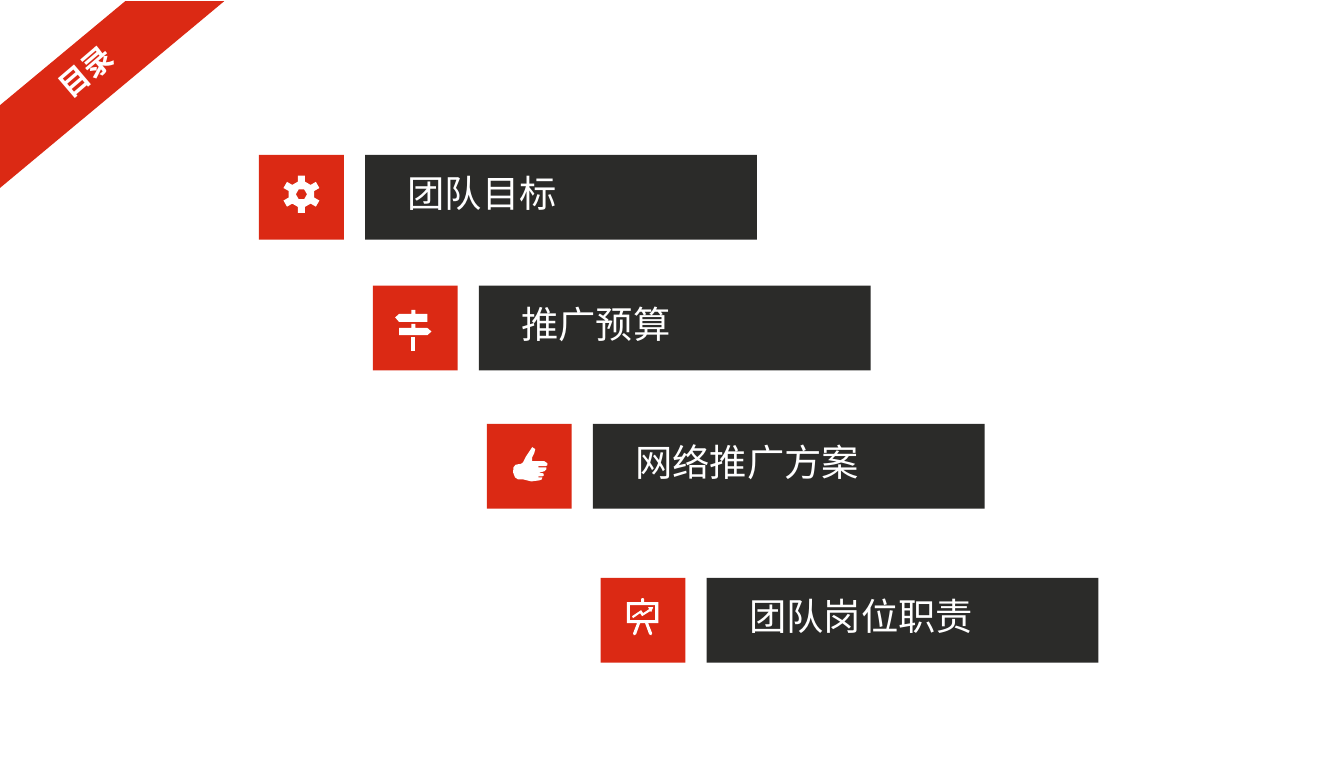
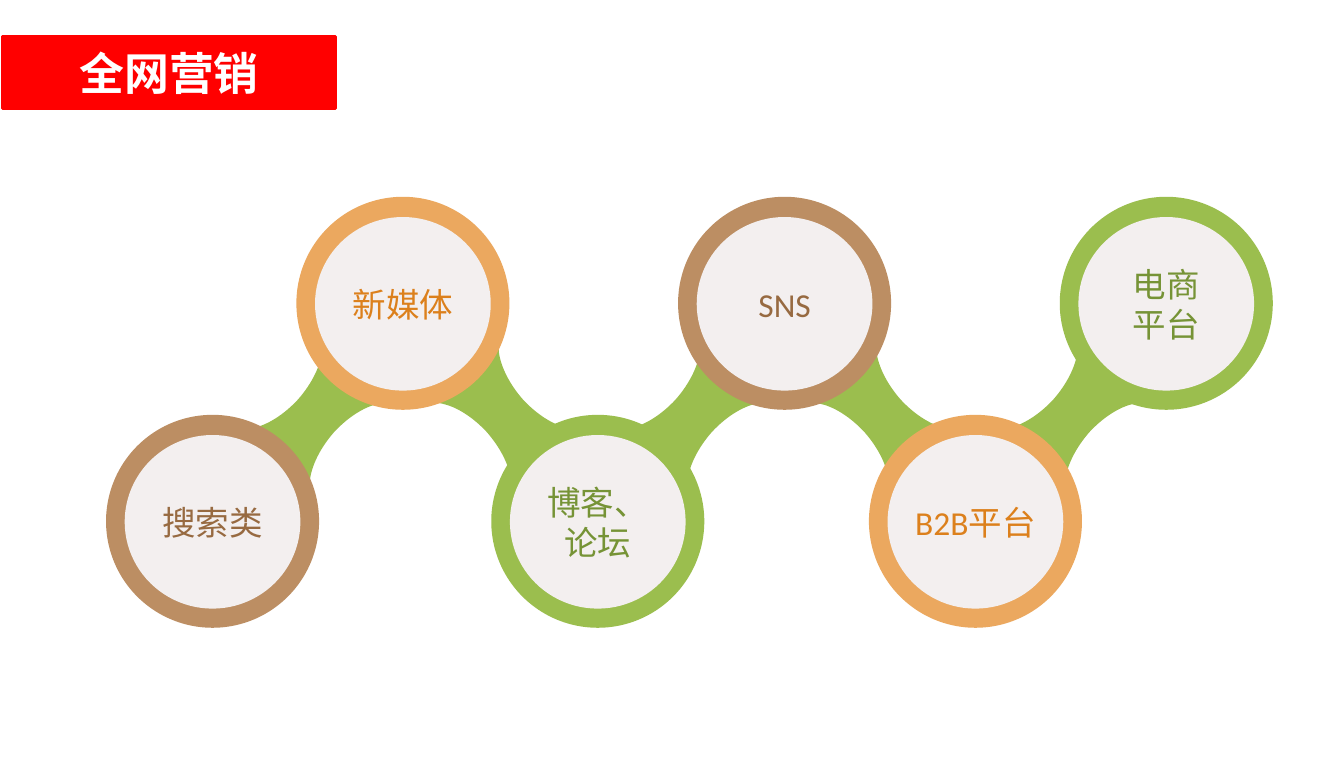
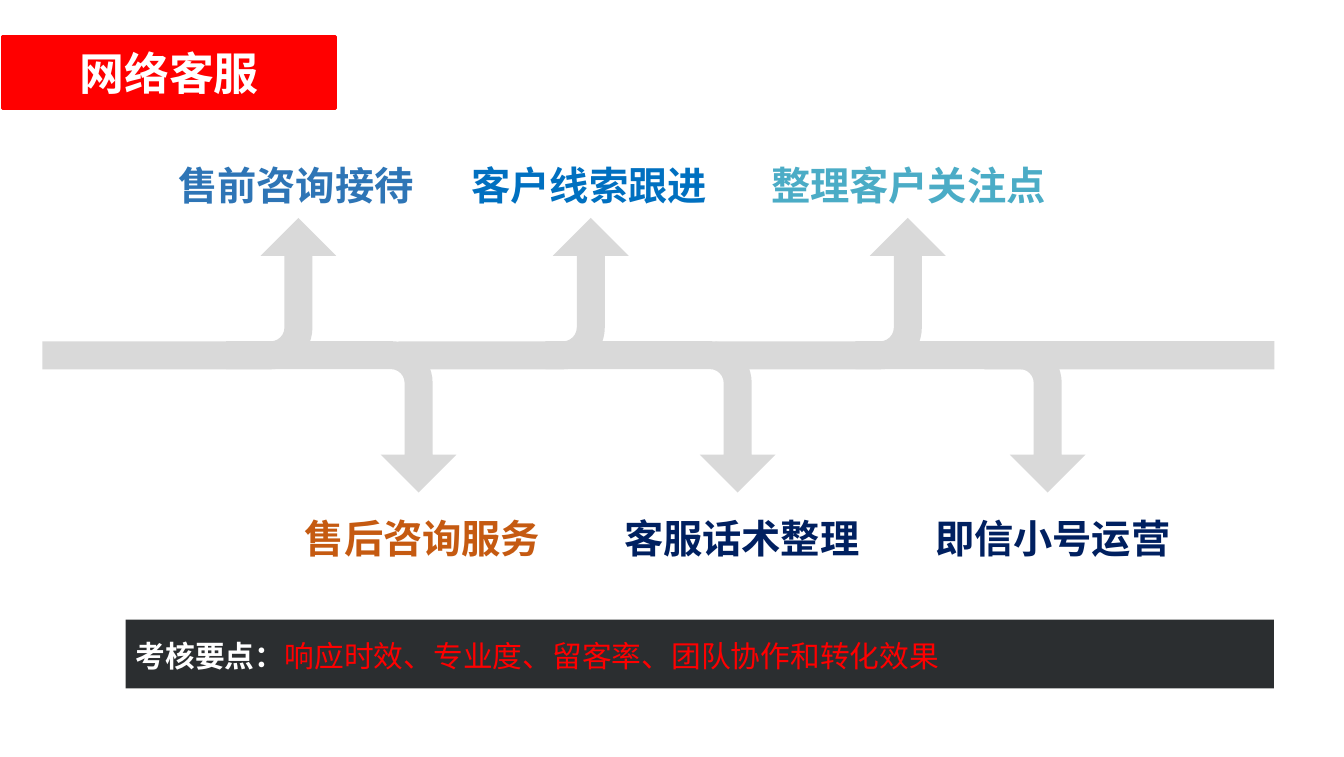
from math import cos, radians, sin

from lxml import etree
from pptx import Presentation
from pptx.dml.color import RGBColor
from pptx.enum.shapes import MSO_SHAPE
from pptx.enum.text import MSO_ANCHOR, MSO_AUTO_SIZE, PP_ALIGN
from pptx.oxml.ns import qn
from pptx.util import Inches, Pt

RECT, OVAL, BENT = MSO_SHAPE.RECTANGLE, MSO_SHAPE.OVAL, MSO_SHAPE.BENT_ARROW
LEFT, CENTER = PP_ALIGN.LEFT, PP_ALIGN.CENTER
TOP, MIDDLE = MSO_ANCHOR.TOP, MSO_ANCHOR.MIDDLE
NO_FIT = MSO_AUTO_SIZE.NONE

COLS, ROWS, CELL = 133.1, 75, 0.1
LATIN, CJK = "Calibri", "Noto Sans CJK SC"
COLORS = {
    "white": "FFFFFF", "ribbon": "DB2914", "bar": "2B2B29", "red": "FF0000",
    "green": "9BBE4E", "green_text": "769336",
    "brown": "BC8E63", "brown_text": "976A41",
    "orange": "EBA85F", "orange_text": "DC801C",
    "disc": "F3EFEF", "flow": "D9D9D9", "note": "2B2E30", "rust": "C55A11",
    "navy": "002060", "steel": "2E75B6", "blue": "0070C0", "teal": "4BACC6",
}


def grid(n):
    return Inches(n * CELL)


def turn(x, y, degrees):
    a = radians(degrees)
    return x * cos(a) - y * sin(a), x * sin(a) + y * cos(a)


class Deck:
    def __init__(self):
        self.prs = Presentation()
        self.prs.slide_width, self.prs.slide_height = grid(COLS), grid(ROWS)
        self.s = None

    def slide(self):
        self.s = self.prs.slides.add_slide(self.prs.slide_layouts[5])

    def place(self, sp, x, y, w, h):
        sp.left, sp.top, sp.width, sp.height = map(grid, (x, y, w, h))

    def paint(self, sp, color):
        sp.shadow.inherit = False
        sp.fill.solid()
        sp.fill.fore_color.rgb = RGBColor.from_string(COLORS[color])
        sp.line.fill.background()
        return sp

    def text(self, sp, paragraphs, size, font=LATIN, align=CENTER, anchor=MIDDLE,
             insets=None, spacing=None):
        tf = sp.text_frame
        tf.word_wrap, tf.auto_size, tf.vertical_anchor = True, NO_FIT, anchor
        if insets:
            tf.margin_left, tf.margin_top, tf.margin_right, tf.margin_bottom = map(grid, insets)
        for i, runs in enumerate(paragraphs):
            p = tf.add_paragraph() if i else tf.paragraphs[0]
            p.alignment = align
            if spacing:
                p.line_spacing = spacing
            for words, color, bold in runs:
                r = p.add_run()
                r.text = words
                r.font.size, r.font.bold, r.font.name = Pt(size), bold, font
                r.font.color.rgb = RGBColor.from_string(COLORS[color])
                etree.SubElement(r._r.get_or_add_rPr(), qn("a:ea")).set("typeface", CJK)

    def shape(self, kind, x, y, w, h, color):
        return self.paint(self.s.shapes.add_shape(kind, *map(grid, (x, y, w, h))), color)

    def outline(self, contours, color, x=0, y=0, rotation=0):
        contours = [[turn(px, py, -rotation) for px, py in c] for c in contours]
        contours = [[(grid(x + px), grid(y + py)) for px, py in c] for c in contours]
        fb = self.s.shapes.build_freeform(*contours[0][0])
        for i, points in enumerate(contours):
            if i:
                fb.move_to(*points[0])
            fb.add_line_segments(points[1:], close=True)
        sp = self.paint(fb.convert_to_shape(), color)
        sp.rotation = rotation % 360
        return sp

    def bend(self, sp, starts):
        lines = list(sp.element.iter(qn("a:lnTo")))
        for start in starts:
            first, *rest = lines[start:start + 3]
            first.tag = qn("a:cubicBezTo")
            for line in rest:
                first.append(line[0])
                line.getparent().remove(line)

    def ribbon_title(self, words):
        cx, cy = 9.05, 6.95
        corners = [(12.4, 0.1), (22.2, 0.1), (0, 18.6), (0, 10.4)]
        ribbon = self.outline([[(x - cx, y - cy) for x, y in corners]], "ribbon",
                              cx, cy, 320.1)
        sp = self.s.shapes.title
        ribbon.element.addnext(sp.element)
        self.place(sp, 4.4, 4.45, 8.9, 4.6)
        sp.rotation = 319.5
        self.text(sp, [[(words, "white", True)]], 21.3, CJK, LEFT, TOP)

    def band_title(self, words):
        sp = self.s.shapes.title
        self.place(sp, 0.25, 3.65, 33, 7.1)
        self.paint(sp, "red")
        sp.line.color.rgb = RGBColor.from_string(COLORS["red"])
        sp.line.width = Pt(2)
        self.text(sp, [[(words, "white", True)]], 32)

    def agenda_row(self, x, y, words, icon):
        self.shape(RECT, x, y, 8.4, 8.4, "ribbon")
        bar = self.shape(RECT, x + 10.5, y, 38.8, 8.4, "bar")
        self.text(bar, [[(words, "white", False)]], 26.6, CJK, LEFT, TOP, (4.2, 1.5, 1, 0))
        for contours in icon:
            self.outline(contours, "white", x, y)

    def ring(self, x, y, lines, color):
        self.shape(OVAL, x, y, 21.1, 21.1, color)
        disc = self.shape(OVAL, x + 1.85, y + 2, 17.4, 17.2, "disc")
        self.text(disc, [[(line, color + "_text", False)] for line in lines], 23.9,
                  insets=(0, 0, 0, 0))

    def link(self, cx, cy, side):
        half = [(-6.7, 1.3), (-6.2, 1.2), (-4.8, 0.9), (-3.2, -0.1), (-1.8, -1.6),
                (-0.4, -3.2), (0.4, -4.9), (0.6, -6.3), (0.6, -6.8)]
        points = half + [(-x, -y) for x, y in half]
        sp = self.outline([[(side * x, y) for x, y in points]], "green", cx, cy, -48 * side)
        self.bend(sp, (1, 4, 10, 13))

    def flow_arrow(self, head, length, up):
        center_y = 29.1 if up else 41.3
        sp = self.shape(BENT, head + 3.75 - length / 2 - 7.5, center_y - length / 2,
                        15, length, "flow")
        for i, share in enumerate((0.185, 0.25, 0.25, 0.276)):
            sp.adjustments[i] = share
        sp.rotation = 270 if up else 90
        if up:
            sp.element.spPr.find(qn("a:xfrm")).set("flipV", "1")

    def flow_label(self, cx, y, words, color):
        w = 4.4 * len(words)
        sp = self.s.shapes.add_textbox(*map(grid, (cx - w / 2, y, w, 5.5)))
        self.text(sp, [[(words, color, True)]], 28, spacing=1.2)


def gear():
    tooth = [(-0.35, -1.25), (-0.35, -1.85), (0.35, -1.85), (0.35, -1.25)]
    rim = [turn(x, y, a) for a in range(0, 360, 60) for x, y in tooth]
    hole = [turn(0.55, 0, a) for a in range(0, 360, 60)]
    return [[[(x + 4.2, y + 3.9) for x, y in c] for c in (rim, hole)]]


SIGNPOST = [
    [[(2.2, 3.15), (2.6, 2.8), (3.8, 2.8), (3.8, 2.4), (4.2, 2.4), (4.2, 2.8),
      (5.4, 2.8), (5.4, 3.6), (2.6, 3.6)]],
    [[(2.6, 4.2), (3.8, 4.2), (3.8, 3.8), (4.2, 3.8), (4.2, 4.2), (5.4, 4.2),
      (5.8, 4.55), (5.4, 4.9), (2.6, 4.9)]],
    [[(3.8, 5.1), (4.2, 5.1), (4.2, 6.5), (3.8, 6.5)]],
]
THUMB = [[[
    (4.5, 2.3), (4.8, 2.5), (4.7, 2.9), (4.5, 3.3), (4.5, 3.7), (5.7, 3.7), (6, 3.9),
    (6, 4.1), (5.8, 4.2), (5.1, 4.2), (5.1, 4.3), (5.9, 4.3), (5.9, 4.5), (5.7, 4.7),
    (5.1, 4.85), (5.6, 4.9), (5.65, 5.1), (5.5, 5.2), (5.1, 5.2), (5.1, 5.3),
    (5.5, 5.3), (5.45, 5.5), (5.2, 5.6), (4.4, 5.7), (3.6, 5.5), (3.1, 5.5),
    (2.8, 5.3), (2.6, 4.8), (2.65, 4.3), (2.85, 4.05), (3.4, 3.95), (3.6, 3.8),
    (3.9, 3.2),
]]]
EASEL = [
    [[(5.7, 2.4), (4.3, 2.4), (4.3, 2.1), (4.2, 2), (4.1, 2), (4, 2.1), (4, 2.4),
      (2.6, 2.4), (2.6, 4.5), (3.6, 4.5), (3.2, 5.5), (3.3, 5.7), (3.5, 5.6),
      (3.9, 4.5), (4.4, 4.5), (4.8, 5.6), (5, 5.7), (5.1, 5.5), (4.7, 4.5),
      (5.7, 4.5)],
     [(5.4, 4.2), (2.9, 4.2), (2.9, 2.7), (5.4, 2.7)]],
    [[(3.2, 4), (3.9, 3.5), (4.1, 3.8), (4.9, 3.3), (5, 3.4), (5.2, 2.9), (4.7, 2.9),
      (4.8, 3.1), (4.2, 3.5), (4, 3.2), (3.1, 3.8)]],
]


def agenda(deck):
    deck.slide()
    deck.ribbon_title("目录")
    rows = [(15.35, "团队目标", gear()), (28.3, "推广预算", SIGNPOST),
            (42, "网络推广方案", THUMB), (57.25, "团队岗位职责", EASEL)]
    for i, (y, words, icon) in enumerate(rows):
        deck.agenda_row(25.65 + 11.28 * i, y, words, icon)


def channels(deck):
    deck.slide()
    deck.band_title("全网营销")
    for i in range(5):
        deck.link(31.3 + 18.7 * i, 41.2, -1 if i % 2 else 1)
    rings = [(10.5, ["搜索类"], "brown"), (29.35, ["新媒体"], "orange"),
             (48.65, ["博客、论坛"], "green"), (67.15, ["SNS"], "brown"),
             (86.05, ["B2B平台"], "orange"), (104.95, ["电商", "平台"], "green")]
    for i, (x, lines, color) in enumerate(rings):
        deck.ring(x, 19.5 if i % 2 else 41.1, lines, color)


def service(deck):
    deck.slide()
    deck.band_title("网络客服")
    note = deck.shape(RECT, 12.45, 61.4, 113.7, 6.8, "note")
    deck.text(note, [[("考核要点：", "white", True),
                      ("响应时效、专业度、留客率、团队协作和转化效果", "red", False)]],
              21.2, align=LEFT, insets=(1, 0.8, 1, 0.4))
    steps = [(29.55, 29.1, 29.3, "售前咨询接待", "steel"),
             (41.45, 22.8, 41.85, "售后咨询服务", "rust"),
             (58.5, 22.8, 58.35, "客户线索跟进", "blue"),
             (73.05, 22.8, 73.45, "客服话术整理", "navy"),
             (89.9, 22.8, 89.95, "整理客户关注点", "teal"),
             (103.75, 22.8, 104.25, "即信小号运营", "navy")]
    for i, (head, length, label_x, words, color) in enumerate(steps):
        up = i % 2 == 0
        deck.flow_arrow(head, length, up)
        deck.flow_label(label_x, 15.1 if up else 50.1, words, color)
    deck.shape(RECT, 97.5, 33.8, 28.7, 2.8, "flow")


def main():
    deck = Deck()
    for build in (agenda, channels, service):
        build(deck)
    deck.prs.save("out.pptx")


if __name__ == "__main__":
    main()
